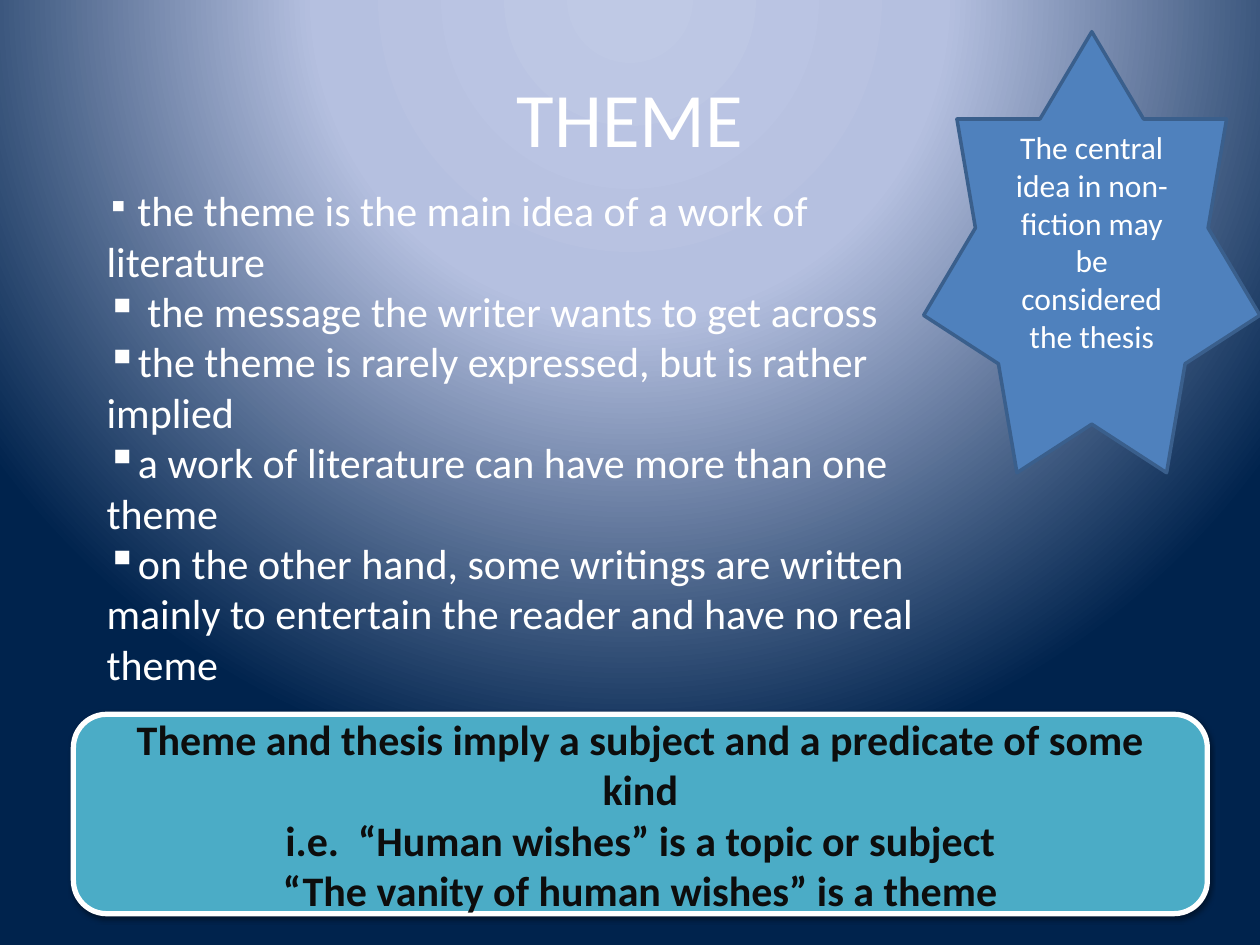
import pptx
import pptx.dml.color
import pptx.enum.shapes
import pptx.enum.text
import pptx.oxml
import pptx.oxml.ns
import pptx.util
from pptx.util import Cm

COLORS = {
    "white": "FFFFFF", "ink": "0D0D0D", "star": "4F81BD", "star_edge": "3A5F8C",
    "teal": "4BACC6", "shadow": "000000",
    "glow": "BFC9E5", "haze": "B5C0E0", "night": "00234D",
}
FONT = "Calibri"
SHAPES = pptx.enum.shapes.MSO_SHAPE
ALIGN = pptx.enum.text.PP_ALIGN
ANCHOR = pptx.enum.text.MSO_ANCHOR
NS = pptx.oxml.ns.nsdecls("a")

POINTS = [
    [(" ", 18), ("the theme is the main idea of a work of literature", 24)],
    [(" the message the writer wants to get across", 24)],
    [("the theme is rarely expressed, but is rather implied", 24)],
    [("a work of literature can have more than one theme", 24)],
    [("on the other hand, some writings are written mainly to entertain "
      "the reader and have no real theme", 24)],
]
SUMMARY = [
    "Theme and thesis imply a subject and a predicate of some kind",
    "i.e.  “Human wishes” is a topic or subject",
    "“The vanity of human wishes” is a theme",
]


def rgb(name):
    return pptx.dml.color.RGBColor.from_string(COLORS[name])


def write(shape, paragraphs, color="white", bold=False,
          align=ALIGN.CENTER, anchor=ANCHOR.MIDDLE, bullet=None):
    """Fill a shape with paragraphs, each a list of (text, size) spans."""
    frame = shape.text_frame
    frame.word_wrap = True
    frame.vertical_anchor = anchor
    for index, spans in enumerate(paragraphs):
        para = frame.add_paragraph() if index else frame.paragraphs[0]
        para.alignment = align
        if bullet:
            para._p.get_or_add_pPr().append(
                pptx.oxml.parse_xml(f'<a:buChar {NS} char="{bullet}"/>'))
        for text, size in spans:
            span = para.add_run()
            span.text = text
            style = {"name": FONT, "size": pptx.util.Pt(size), "bold": bold}
            for key, value in style.items():
                setattr(span.font, key, value)
            span.font.color.rgb = rgb(color)


def add_panel(page, kind, box, fill, line, width):
    shape = page.shapes.add_shape(kind, *box)
    shape.shadow.inherit = False
    shape.fill.solid()
    shape.fill.fore_color.rgb = rgb(fill)
    shape.line.color.rgb = rgb(line)
    shape.line.width = pptx.util.Pt(width)
    return shape


def paint_background(page):
    """Radial glow centred above the top edge."""
    page.background.fill.gradient()
    gradient = page.element.find(".//" + pptx.oxml.ns.qn("a:gradFill"))
    stops = "".join(
        f'<a:gs pos="{percent * 1000}"><a:srgbClr val="{COLORS[name]}"/></a:gs>'
        for percent, name in [(0, "glow"), (40, "haze"), (100, "night")])
    glow = pptx.oxml.parse_xml(
        f'<a:gradFill {NS} rotWithShape="1"><a:gsLst>{stops}</a:gsLst>'
        '<a:path path="circle"><a:fillToRect l="50000" t="-80000" r="50000" '
        'b="180000"/></a:path></a:gradFill>')
    gradient.getparent().replace(gradient, glow)


def add_title(page, box):
    write(page.shapes.add_textbox(*box), [[("THEME", 44)]])


def add_points(page, box):
    write(page.shapes.add_textbox(*box), POINTS, align=ALIGN.LEFT,
          anchor=ANCHOR.TOP, bullet="▪")


def add_star(page, box):
    star = add_panel(page, SHAPES.STAR_7_POINT, box, "star", "star_edge", 2)
    text = "The central idea in non-fiction may be considered the thesis"
    write(star, [[(text, 18)]])


def add_summary(page, box):
    panel = add_panel(page, SHAPES.ROUNDED_RECTANGLE, box, "teal", "white", 3)
    effects = panel._element.spPr.find(pptx.oxml.ns.qn("a:effectLst"))
    blur, distance = pptx.util.Pt(3.1), pptx.util.Pt(1.6)
    effects.append(pptx.oxml.parse_xml(
        f'<a:outerShdw {NS} blurRad="{blur}" dist="{distance}" dir="5400000" '
        f'rotWithShape="0"><a:srgbClr val="{COLORS["shadow"]}">'
        '<a:alpha val="38000"/></a:srgbClr></a:outerShdw>'))
    write(panel, [[(line, 24)] for line in SUMMARY], color="ink", bold=True)


def main():
    deck = pptx.Presentation()
    deck.slide_width, deck.slide_height = Cm(25.4), Cm(19.05)
    page = deck.slides.add_slide(deck.slide_layouts[6])
    paint_background(page)
    add_title(page, (Cm(1.27), Cm(0.76), Cm(22.86), Cm(3.18)))
    add_points(page, (Cm(1.9), Cm(3.6), Cm(16.94), Cm(11.28)))
    add_star(page, (Cm(18.62), Cm(0.64), Cm(6.78), Cm(8.89)))
    add_summary(page, (Cm(1.48), Cm(14.4), Cm(22.86), Cm(4.02)))
    deck.save("out.pptx")


if __name__ == "__main__":
    main()
